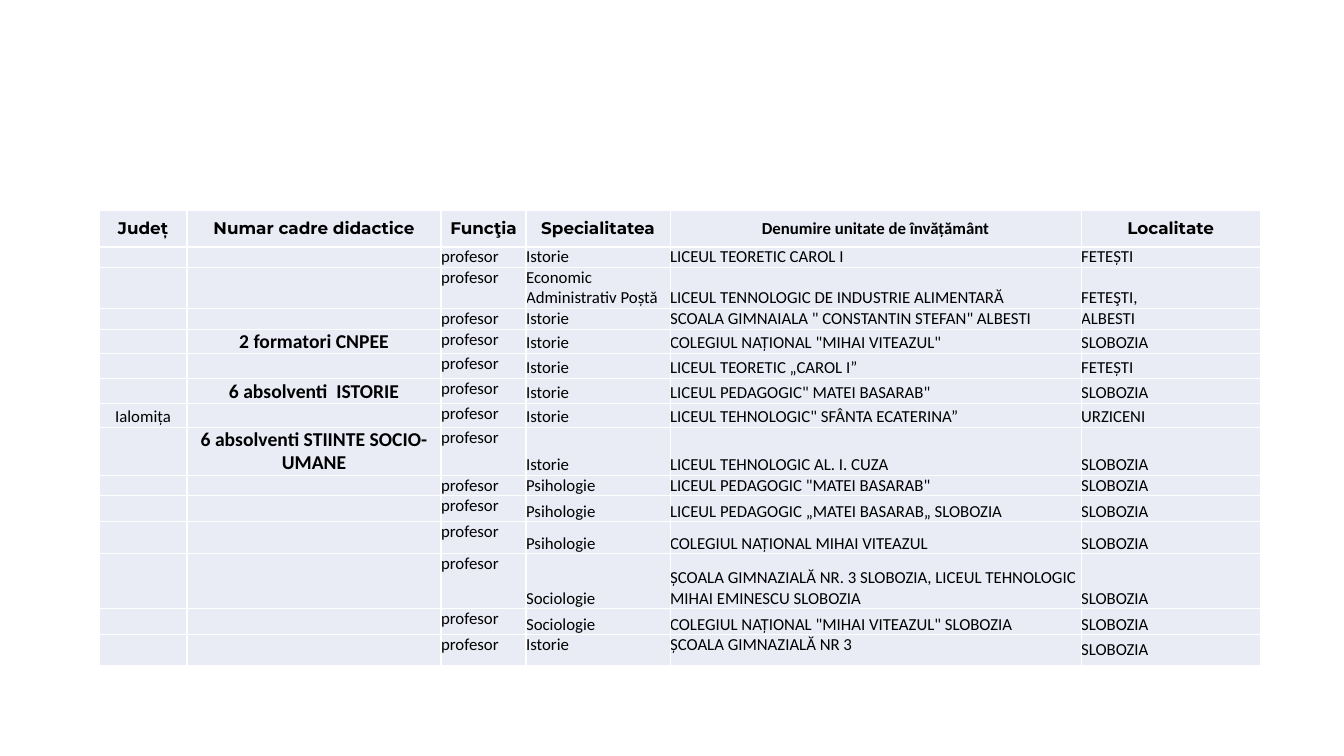
from lxml.etree import SubElement
from pptx import Presentation
from pptx.dml.color import RGBColor as RGB
from pptx.enum.text import MSO_ANCHOR as ANCHOR, PP_ALIGN as ALIGN
from pptx.oxml.ns import qn
from pptx.util import Emu, Inches, Pt

PX = 914400 / 100.8
COLORS = {"cell": "E9EBF5", "border": "FFFFFF", "text": "000000"}
LEFT, TOP = 99, 210
WIDTHS = [88, 254, 85, 144, 411, 179]
HEIGHTS = [37, 20, 41, 21, 24, 25, 25, 24, 47, 20, 26, 32, 55, 26, 31]

HEADERS = ["Județ", "Numar cadre didactice", "Funcţia", "Specialitatea",
           "Denumire unitate de învățământ", "Localitate"]
COUNTIES = {7: "Ialomița"}
GROUPS = {4: "2 formatori CNPEE", 6: "6 absolventi  ISTORIE",
          8: "6 absolventi STIINTE SOCIO-UMANE"}
TEACHERS = [
    ("Istorie", "LICEUL TEORETIC CAROL I", "FETEȘTI"),
    ("Economic Administrativ Poștă", "LICEUL TENNOLOGIC DE INDUSTRIE ALIMENTARĂ", "FETEŞTI,"),
    ("Istorie", 'SCOALA GIMNAIALA " CONSTANTIN STEFAN" ALBESTI', "ALBESTI"),
    ("Istorie", 'COLEGIUL NAȚIONAL "MIHAI VITEAZUL"', "SLOBOZIA"),
    ("Istorie", "LICEUL TEORETIC „CAROL I”", "FETEȘTI"),
    ("Istorie", 'LICEUL PEDAGOGIC" MATEI BASARAB"', "SLOBOZIA"),
    ("Istorie", 'LICEUL TEHNOLOGIC" SFÂNTA ECATERINA”', "URZICENI"),
    ("Istorie", "LICEUL TEHNOLOGIC AL. I. CUZA", "SLOBOZIA"),
    ("Psihologie", 'LICEUL PEDAGOGIC "MATEI BASARAB"', "SLOBOZIA"),
    ("Psihologie", "LICEUL PEDAGOGIC „MATEI BASARAB„ SLOBOZIA", "SLOBOZIA"),
    ("Psihologie", "COLEGIUL NAȚIONAL MIHAI VITEAZUL", "SLOBOZIA"),
    ("Sociologie", "ȘCOALA GIMNAZIALĂ NR. 3 SLOBOZIA, LICEUL TEHNOLOGIC MIHAI EMINESCU SLOBOZIA",
     "SLOBOZIA"),
    ("Sociologie", 'COLEGIUL NAȚIONAL "MIHAI VITEAZUL" SLOBOZIA', "SLOBOZIA"),
    ("Istorie", "ȘCOALA GIMNAZIALĂ NR 3", "SLOBOZIA"),
]

BODY = {"name": "Calibri", "size": Pt(12), "bold": False}
GROUP = {**BODY, "size": Pt(14), "bold": True}
HEADER = {**BODY, "name": "Montserrat", "bold": True}
SCHOOL_HEADER = {**BODY, "bold": True}
MARGINS = {f"margin_{side}": 0 for side in ("left", "right", "top", "bottom")}
ANCHORS = {(1, 3): ANCHOR.TOP, (1, 4): ANCHOR.MIDDLE, (1, 5): ANCHOR.MIDDLE,
           (14, 3): ANCHOR.TOP, (14, 4): ANCHOR.TOP, (14, 5): ANCHOR.MIDDLE}


def px(n):
    return Emu(round(n * PX))


def set_attrs(obj, values):
    for name, value in values.items():
        setattr(obj, name, value)


def add_borders(cell):
    tcPr = cell._tc.get_or_add_tcPr()
    for side in ("lnL", "lnR", "lnT", "lnB"):
        ln = SubElement(tcPr, qn(f"a:{side}"), w=str(Pt(1)))
        fill = SubElement(ln, qn("a:solidFill"))
        SubElement(fill, qn("a:srgbClr"), val=COLORS["border"])


def cell_format(row, col):
    if row == 0:
        return (SCHOOL_HEADER if col == 4 else HEADER), ANCHOR.MIDDLE
    if col == 2:
        return BODY, ANCHOR.TOP
    return (GROUP if col == 1 else BODY), ANCHORS.get((row, col), ANCHOR.BOTTOM)


def fill_cell(cell, row, col, text):
    font, anchor = cell_format(row, col)
    set_attrs(cell, {**MARGINS, "vertical_anchor": anchor})
    add_borders(cell)
    cell.fill.solid()
    cell.fill.fore_color.rgb = RGB.from_string(COLORS["cell"])
    p = cell.text_frame.paragraphs[0]
    if not text:
        SubElement(p._p, qn("a:endParaRPr"), sz="1200")
        return
    p.alignment = ALIGN.CENTER if row == 0 or col < 2 else ALIGN.LEFT
    r = p.add_run()
    r.text = text
    set_attrs(r.font, font)
    r.font.color.rgb = RGB.from_string(COLORS["text"])


def add_teacher_table(s, rows):
    frame = s.shapes.add_table(len(rows), len(WIDTHS), px(LEFT), px(TOP),
                               px(sum(WIDTHS)), px(sum(HEIGHTS)))
    table = frame.table
    set_attrs(table, {"first_row": False, "horz_banding": False})
    for column, width in zip(table.columns, WIDTHS):
        column.width = px(width)
    for line, height in zip(table.rows, HEIGHTS):
        line.height = px(height)
    for row, texts in enumerate(rows):
        for col, text in enumerate(texts):
            fill_cell(table.cell(row, col), row, col, text)


def main():
    prs = Presentation()
    set_attrs(prs, {"slide_width": Inches(13.33), "slide_height": Inches(7.5)})
    s = prs.slides.add_slide(prs.slide_layouts[6])
    rows = [HEADERS]
    for n, teacher in enumerate(TEACHERS, 1):
        rows.append([COUNTIES.get(n, ""), GROUPS.get(n, ""), "profesor", *teacher])
    add_teacher_table(s, rows)
    prs.save("out.pptx")


if __name__ == "__main__":
    main()
